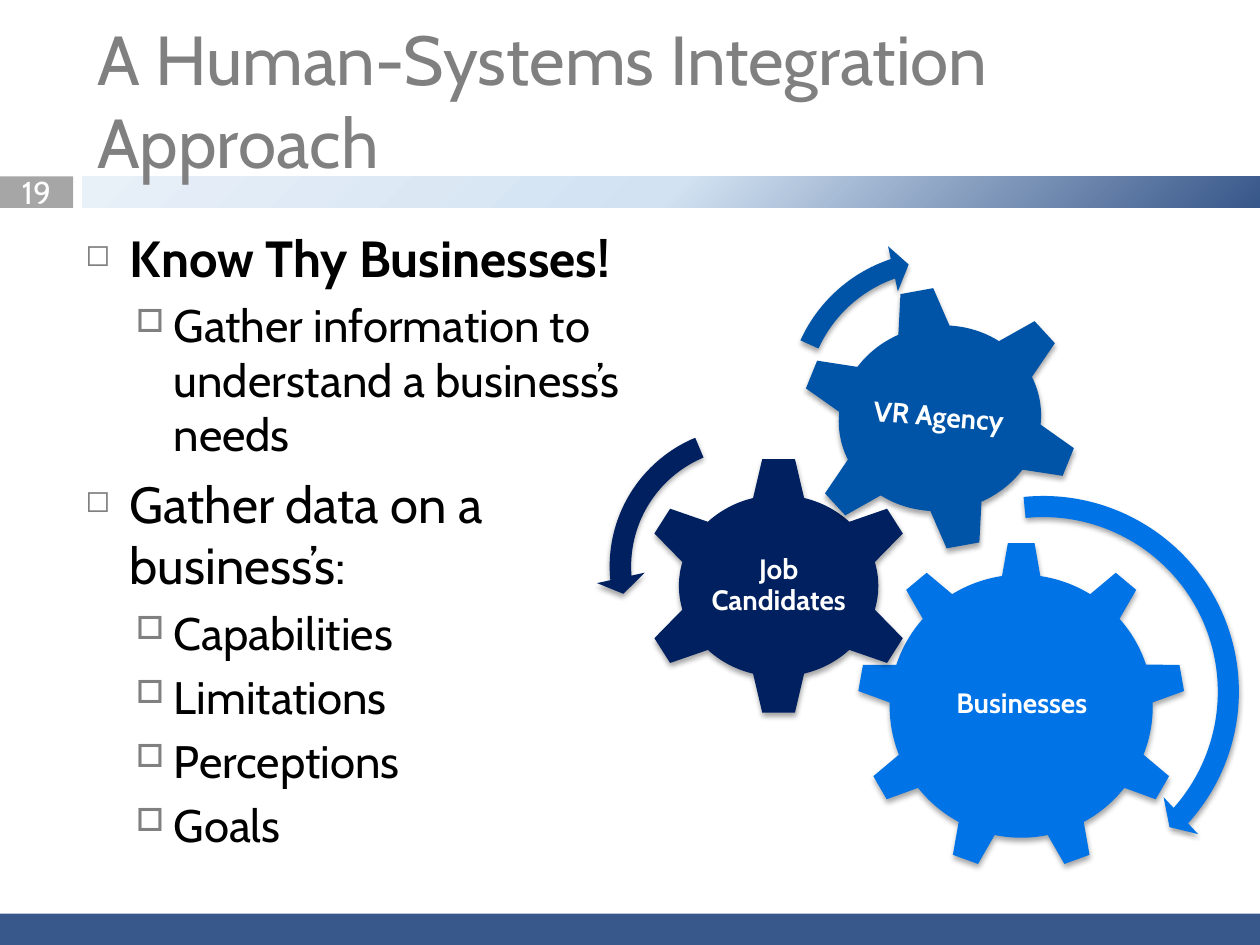
from lxml.etree import SubElement
from pptx import Presentation
from pptx.dml.color import RGBColor
from pptx.enum.shapes import MSO_SHAPE
from pptx.enum.text import MSO_ANCHOR, MSO_AUTO_SIZE, PP_ALIGN
from pptx.oxml import parse_xml
from pptx.oxml.ns import nsdecls, qn
from pptx.util import Inches, Pt

GRAY, WHITE, BLACK = "808080", "FFFFFF", "000000"
NAVY, BLUE, BRIGHT, FOOTER = "002060", "0054A8", "0073E6", "38578A"

deck = Presentation()
deck.slide_width, deck.slide_height = Inches(10), Inches(7.5)
CELL = deck.slide_width / 100  # square grid: 100 columns by 75 rows
slide = deck.slides.add_slide(deck.slide_layouts[5])


def add_piece(shapes, kind, place, color=None, rotation=0):
    """Add a preset shape, or a text box when kind is None; place is in grid cells."""
    area = [round(value * CELL) for value in place]
    if kind is None:
        piece = shapes.add_textbox(*area)
    else:
        piece = shapes.add_shape(kind, *area)
        piece.shadow.inherit = False
        piece.line.fill.background()
        piece.fill.solid()
        piece.fill.fore_color.rgb = RGBColor.from_string(color)
    piece.rotation = rotation
    return piece


def write(para, text, size, color=BLACK, bold=False, align=PP_ALIGN.LEFT):
    para.alignment = align
    span = para.add_run()
    span.text = text
    span.font.name = "Cabin"
    span.font.size = Pt(size)
    span.font.bold = bold
    span.font.color.rgb = RGBColor.from_string(color)


# Bars
number = add_piece(slide.shapes, MSO_SHAPE.RECTANGLE, (0, 14, 5.8, 2.5), "A6A6A6")
frame = number.text_frame
frame.margin_top = frame.margin_bottom = 0
frame.vertical_anchor = MSO_ANCHOR.MIDDLE
write(frame.paragraphs[0], "19", 18, WHITE, align=PP_ALIGN.CENTER)

band = add_piece(slide.shapes, MSO_SHAPE.RECTANGLE, (6.5, 14, 93.5, 2.5), FOOTER)
stops = "".join(
    f'<a:gs pos="{share * 1000}"><a:srgbClr val="{color}"/></a:gs>'
    for share, color in ((0, FOOTER), (50, "D2E2F2"), (100, "E8F0F8")))
solid = band.element.spPr.find(qn("a:solidFill"))
solid.getparent().replace(solid, parse_xml(
    f'<a:gradFill {nsdecls("a")}><a:gsLst>{stops}</a:gsLst><a:path path="circle">'
    '<a:fillToRect l="100000" t="100000"/></a:path></a:gradFill>'))

add_piece(slide.shapes, MSO_SHAPE.RECTANGLE, (0, 72.5, 100, 2.5), FOOTER)

# Title, in front of the bars
title = slide.shapes.title
title.left, title.top, title.width, title.height = (
    round(value * CELL) for value in (6.7, 2.5, 91.7, 10.8))
title.text_frame.auto_size = MSO_AUTO_SIZE.NONE
title.text_frame.vertical_anchor = MSO_ANCHOR.MIDDLE
write(title.text_frame.paragraphs[0], "A Human-Systems Integration Approach", 39.6, GRAY)
title.element.getparent().append(title.element)

# Bulleted list
LEVELS = (  # margin, hanging indent, space before, bullet, bullet percent, text size
    (0.35, 0.35, 7, "◻", 60, 29),
    (0.7, 0.3, 5.5, "□", 70, 26),
)
points = (
    (0, "Know Thy Businesses!"),
    (1, "Gather information to understand a business’s needs"),
    (0, "Gather data on a business’s:"),
    (1, "Capabilities"),
    (1, "Limitations"),
    (1, "Perceptions"),
    (1, "Goals"),
)
body = add_piece(slide.shapes, None, (5.8, 17.5, 50.8, 47.6)).text_frame
body.word_wrap = True
for index, (level, text) in enumerate(points):
    margin, hanging, before, bullet, percent, size = LEVELS[level]
    para = body.add_paragraph() if index else body.paragraphs[0]
    para.level = level
    para.space_before = Pt(before if index else 0)
    properties = para._p.get_or_add_pPr()
    properties.set("marL", str(Inches(margin)))
    properties.set("indent", str(-Inches(hanging)))
    bullet_color = SubElement(properties, qn("a:buClr"))
    SubElement(bullet_color, qn("a:srgbClr"), val=GRAY)
    SubElement(properties, qn("a:buSzPct"), val=str(percent * 1000))
    SubElement(properties, qn("a:buChar"), char=bullet)
    write(para, text, size, bold=index == 0)

# Gears and their turning arrows
gears = (  # shape, place, rotation, color, label, label place, label rotation
    (MSO_SHAPE.GEAR_9, (68, 43, 26.1, 26.1), 0, BRIGHT,
     "Businesses", (73.3, 49.2, 15.6, 13.4), 0),
    (MSO_SHAPE.GEAR_6, (50.8, 36.2, 22, 20.6), 0, NAVY,
     "Job Candidates", (56.2, 41.4, 11.2, 10.2), 0),
    (MSO_SHAPE.GEAR_6, (63.4, 22.7, 22.4, 21), 349.7, BLUE,
     "VR Agency", (68.3, 27.2, 12.4, 11.9), 4.7),
)
arrows = (  # shape, place, rotation, color, adjustments
    (MSO_SHAPE.CIRCULAR_ARROW, (66.1, 38.2, 33.4, 33.4), 0, BRIGHT,
     (0.05, 2.99, 25.2, 158.54, 0.06)),
    (MSO_SHAPE.LEFT_CIRCULAR_ARROW, (47.3, 32.8, 24.3, 24.3), 0, NAVY,
     (0.07, 4.3, 104.89, 148.38, 0.08)),
    (MSO_SHAPE.CIRCULAR_ARROW, (61.4, 18.9, 26.2, 26.2), 29.3, BLUE,
     (0.06, 3.94, 133.14, 105.08, 0.07)),
)
machine = slide.shapes.add_group_shape().shapes
turning = []
for kind, place, rotation, color, label, label_place, label_rotation in gears:
    turning.append(add_piece(machine, kind, place, color, rotation))
    frame = add_piece(machine, None, label_place, rotation=label_rotation).text_frame
    frame.word_wrap = True
    frame.vertical_anchor = MSO_ANCHOR.MIDDLE
    frame.margin_left = frame.margin_right = Inches(0.02)
    frame.margin_top = frame.margin_bottom = Inches(0.02)
    frame.paragraphs[0].line_spacing = 0.9
    write(frame.paragraphs[0], label, 16, WHITE, bold=True, align=PP_ALIGN.CENTER)
for kind, place, rotation, color, adjustments in arrows:
    arrow = add_piece(machine, kind, place, color, rotation)
    for index, value in enumerate(adjustments):
        arrow.adjustments[index] = value
    turning.append(arrow)

for piece in turning:
    effects = piece.element.spPr.find(qn("a:effectLst"))
    shadow = SubElement(effects, qn("a:outerShdw"), blurRad=str(Pt(3)), dist=str(Pt(2)),
                        dir="5400000", rotWithShape="0")
    shade = SubElement(shadow, qn("a:srgbClr"), val=BLACK)
    SubElement(shade, qn("a:alpha"), val="35000")

deck.save("out.pptx")
